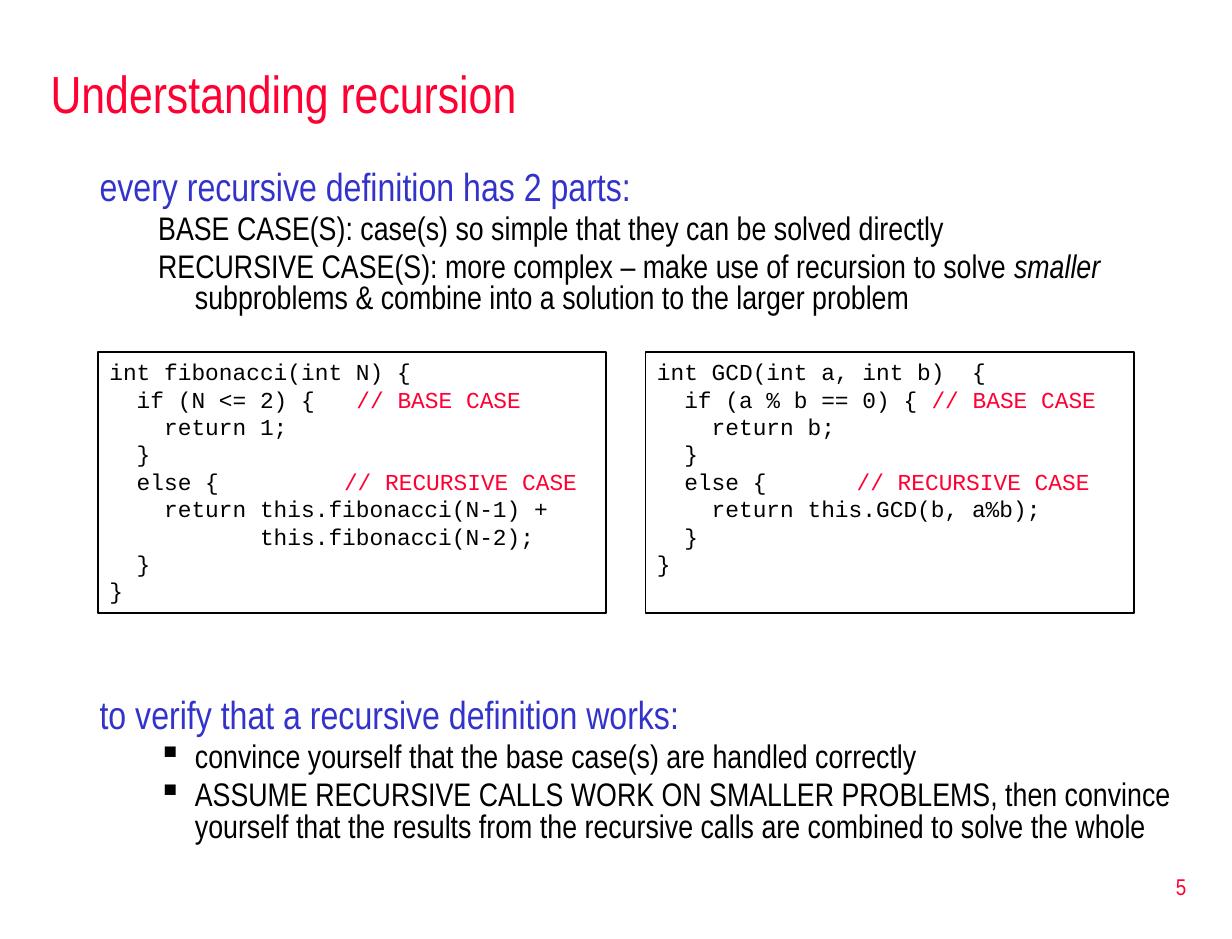
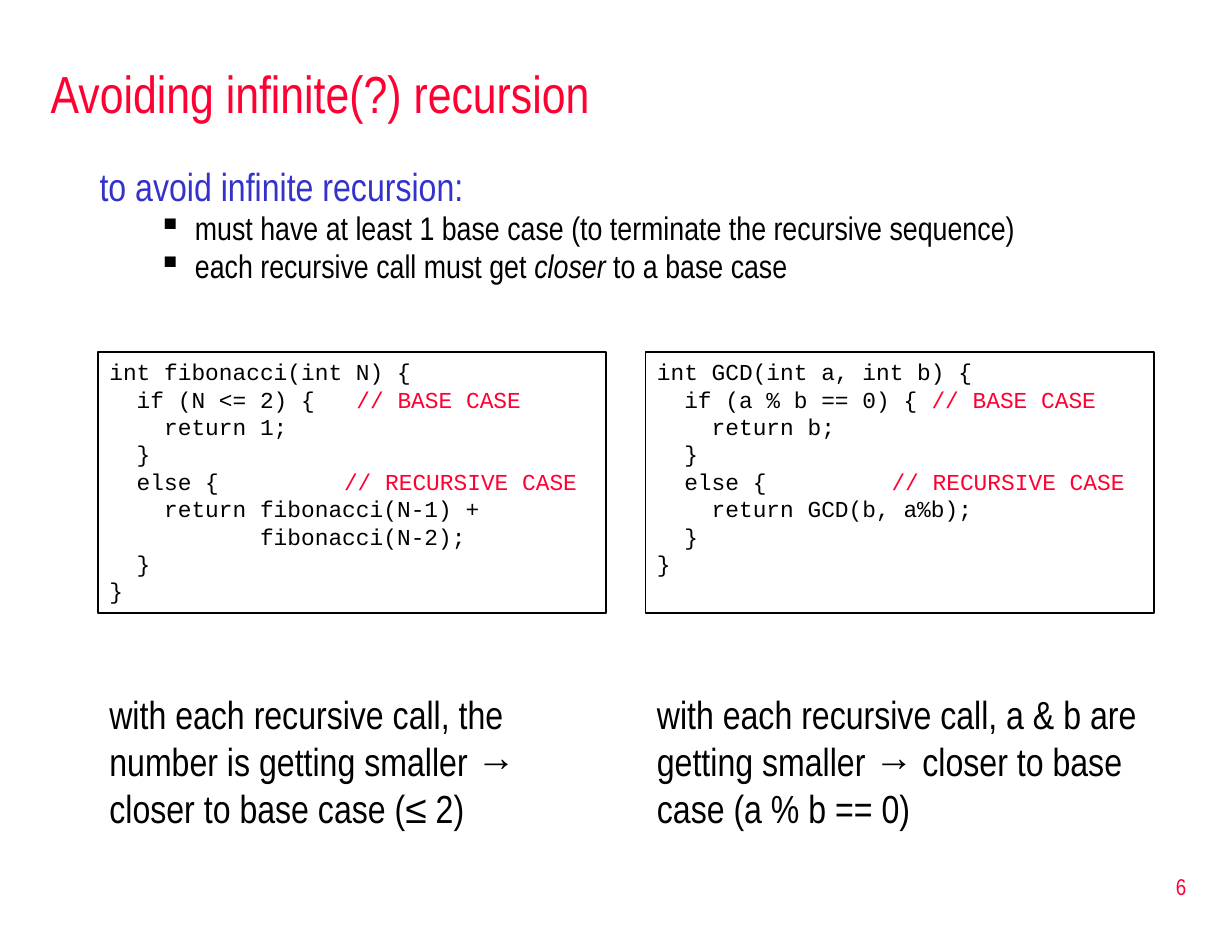
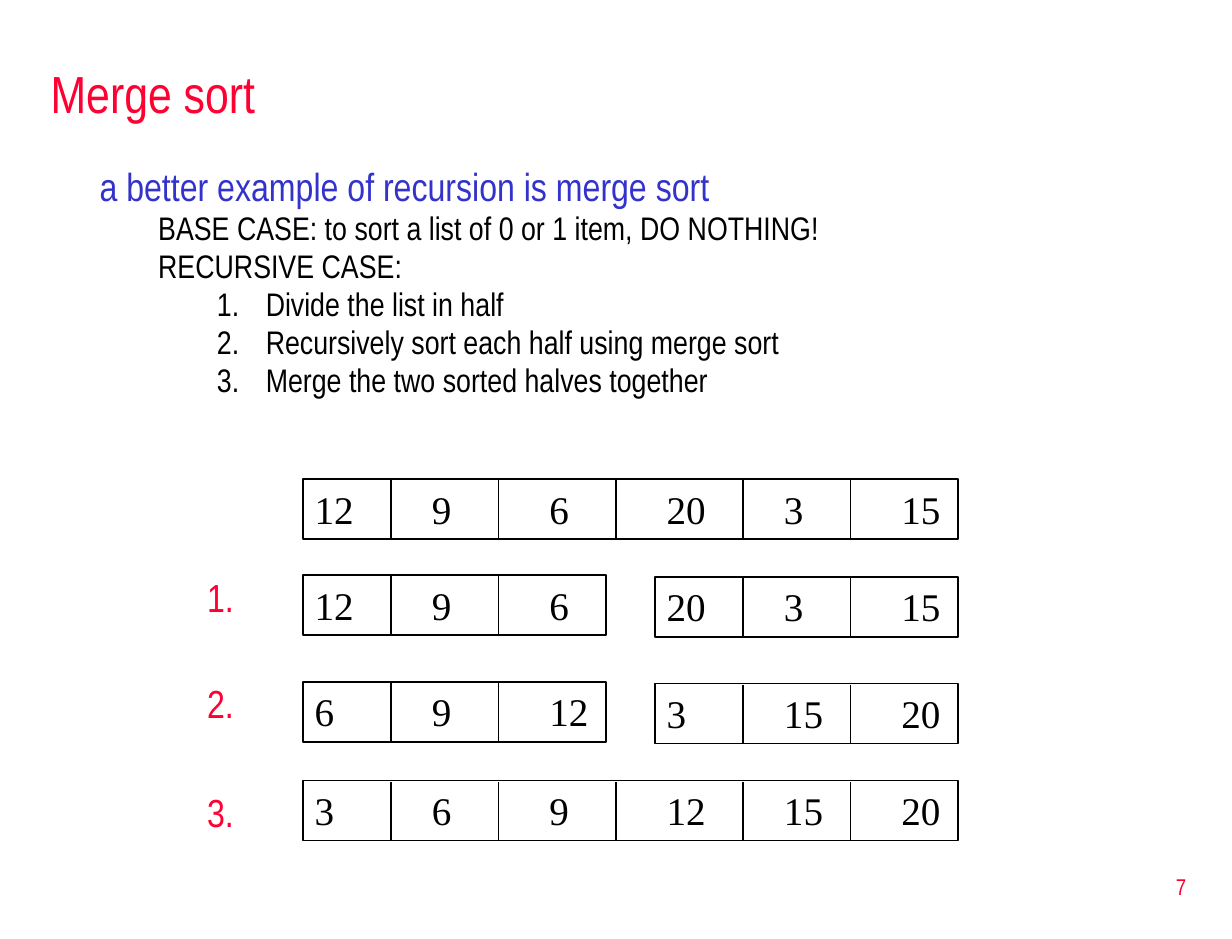
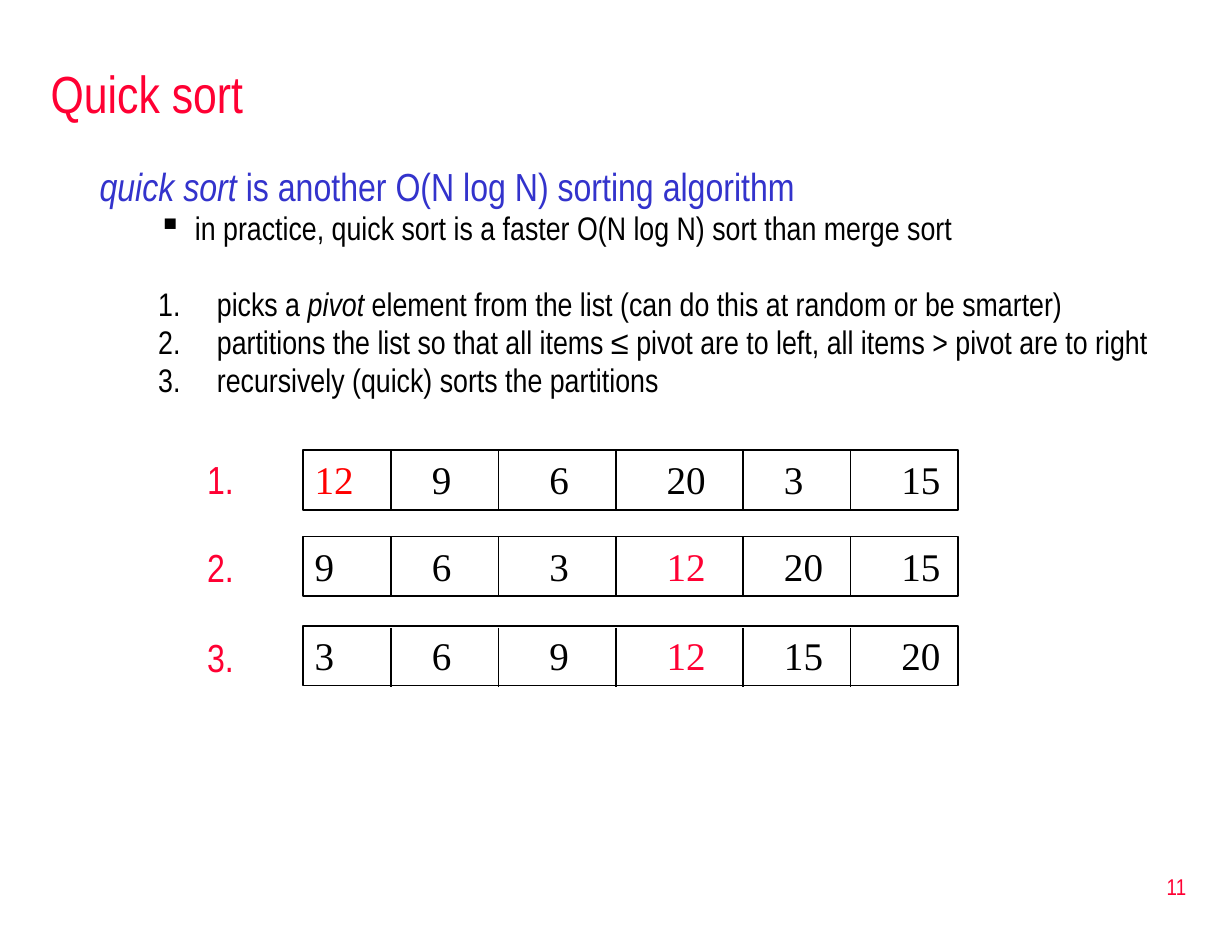
"""Builds four lecture slides on recursion, merge sort and quick sort."""
from lxml import etree
from pptx import Presentation
from pptx.dml.color import RGBColor
from pptx.enum import shapes, text
from pptx.oxml import ns
from pptx.util import Pt

COLORS = {"red": "FF0033", "pivot": "FF0000", "blue": "3333CC", "black": "000000"}
SANS, MONO, SERIF = "Arial Narrow", "Courier New", "Times New Roman"
KINDS = {
    "heading": (0, 27, -27, None),
    "plain": (1, 58.5, -22.5, None),
    "bullet": (1, 58.5, -22.5, "▪"),
    "number": (1, 72, -36, "1."),
    "step": (2, 102, -30, "1."),
}
DIVIDERS = (240, 306, 378, 456, 522)
LEFT, RIGHT, HALF, FULL = 186, 402, 186, 402

FIBONACCI = """int fibonacci(int N) {
  if (N <= 2) {   |// BASE CASE|
    return 1;
  }
  else {\t\t|// RECURSIVE CASE|
    return this.fibonacci(N-1) +
           this.fibonacci(N-2);
  }
}"""
GCD = """int GCD(int a, int b)  {
  if (a % b == 0) { |// BASE CASE|
    return b;
  }
  else {\t      |// RECURSIVE CASE|
    return this.GCD(b, a%b);
  }
}"""


def rgb(name):
    return RGBColor.from_string(COLORS[name])


class Deck:
    def __init__(self):
        self.prs = Presentation()
        self.prs.slide_width, self.prs.slide_height = Pt(756), Pt(576)
        self.s = None

    def slide(self, title, number):
        self.s = self.prs.slides.add_slide(self.prs.slide_layouts[6])
        middle = text.MSO_ANCHOR.MIDDLE
        self.text(24, 30, 714, 54, title, 32, "red", middle)
        tf = self.text(577.5, 525, 157.5, 38, number, 14, "red", middle)
        tf.paragraphs[0].alignment = text.PP_ALIGN.RIGHT

    def add_runs(self, p, content, font, size, color, accent=None):
        for i, part in enumerate(content.split("|")):
            if not part:
                continue
            r = p.add_run()
            r.text = part
            r.font.name, r.font.size = font, Pt(size)
            marked = i % 2 == 1
            r.font.color.rgb = rgb(accent if marked and accent else color)
            if marked and not accent:
                r.font.italic = True

    def frame(self, x, y, w, h):
        tf = self.s.shapes.add_textbox(Pt(x), Pt(y), Pt(w), Pt(h)).text_frame
        tf.word_wrap = True
        return tf

    def text(self, x, y, w, h, content, size=24, color="black", anchor=text.MSO_ANCHOR.TOP):
        tf = self.frame(x, y, w, h)
        tf.vertical_anchor = anchor
        self.add_runs(tf.paragraphs[0], content, SANS, size, color)
        return tf

    def body(self, y, h, *items):
        tf = self.frame(54, y, 685.5, h)
        previous = None
        for kind, content in items:
            level, margin, indent, mark = KINDS[kind]
            p = tf.add_paragraph() if previous else tf.paragraphs[0]
            p.level = level
            if kind == "heading":
                self.add_runs(p, content, SANS, 24, "blue")
            else:
                p.line_spacing = 0.8
                p.space_before = Pt(27.3 if (previous, kind) == ("bullet", "number") else 4)
                self.add_runs(p, content, SANS, 20, "black")
            pr = p._p.get_or_add_pPr()
            pr.set("marL", str(Pt(margin)))
            pr.set("indent", str(Pt(indent)))
            if mark == "1.":
                etree.SubElement(pr, ns.qn("a:buAutoNum"), type="arabicPeriod")
            elif mark:
                etree.SubElement(pr, ns.qn("a:buChar"), char=mark)
            previous = kind

    def box(self, x, y, w, h, lines, font, size, accent):
        sp = self.s.shapes.add_shape(shapes.MSO_SHAPE.RECTANGLE, Pt(x), Pt(y), Pt(w), Pt(h))
        sp.shadow.inherit = False
        sp.fill.background()
        sp.line.color.rgb, sp.line.width = rgb("black"), Pt(1)
        tf = sp.text_frame
        tf.word_wrap = True
        tf.vertical_anchor = text.MSO_ANCHOR.TOP
        for i, line in enumerate(lines):
            p = tf.add_paragraph() if i else tf.paragraphs[0]
            p.alignment = text.PP_ALIGN.LEFT
            self.add_runs(p, line, font, size, "black", accent)
            tabs = etree.SubElement(p._p.get_or_add_pPr(), ns.qn("a:tabLst"))
            for stop in range(72, 432, 72):
                etree.SubElement(tabs, ns.qn("a:tab"), pos=str(Pt(stop)), algn="l")

    def code(self, x, w, source):
        self.box(x, 216, w, 160, source.split("\n"), MONO, 14, "red")

    def array(self, y, values, x=LEFT, w=FULL, drop=0, accent="red"):
        self.box(x, y, w, 36.7, ["\t".join(values.split())], SERIF, 24, accent)
        for d in DIVIDERS:
            if x < d < x + w:
                self.line(d, y + drop, 36)

    def line(self, x, y, h):
        c = self.s.shapes.add_connector(
            shapes.MSO_CONNECTOR.STRAIGHT, Pt(x), Pt(y), Pt(x), Pt(y + h))
        c.line.color.rgb, c.line.width = rgb("black"), Pt(1)
        etree.SubElement(c._element.spPr, ns.qn("a:effectLst"))

    def labels(self, *tops):
        for i, y in enumerate(tops, 1):
            self.text(120, y, 48, 36, f"{i}.", color="red")


def main():
    deck = Deck()

    deck.slide("Understanding recursion", "5")
    deck.body(96, 114,
              ("heading", "every recursive definition has 2 parts:"),
              ("plain", "BASE CASE(S): case(s) so simple that they can be solved directly"),
              ("plain", "RECURSIVE CASE(S): more complex – make use of recursion to solve "
                        "|smaller| subproblems & combine into a solution to the larger problem"))
    deck.code(60, 312, FIBONACCI)
    deck.code(396, 300, GCD)
    deck.body(420, 114,
              ("heading", "to verify that a recursive definition works:"),
              ("bullet", "convince yourself that the base case(s) are handled correctly"),
              ("bullet", "ASSUME RECURSIVE CALLS WORK ON SMALLER PROBLEMS, then convince yourself "
                         "that the results from the recursive calls are combined to solve the whole"))

    deck.slide("Avoiding infinite(?) recursion", "6")
    deck.body(96, 102,
              ("heading", "to avoid infinite recursion:"),
              ("bullet", "must have at least 1 base case (to terminate the recursive sequence)"),
              ("bullet", "each recursive call must get |closer| to a base case"))
    deck.code(60, 312, FIBONACCI.replace("this.", ""))
    deck.code(396, 312, GCD.replace("this.", "").replace(")  {", ") {").replace("\t      ", "\t\t"))
    deck.text(60, 420, 312, 93.6, "with each recursive call, the number is getting smaller → "
                                  "closer to base case (≤ 2)")
    deck.text(396, 420, 312, 93.6, "with each recursive call, a & b are getting smaller → "
                                   "closer to base case (a % b == 0)")

    deck.slide("Merge sort", "7")
    deck.body(96, 180,
              ("heading", "a better example of recursion is merge sort"),
              ("plain", "BASE CASE: to sort a list of 0 or 1 item, DO NOTHING!"),
              ("plain", "RECURSIVE CASE:"),
              ("step", "Divide the list in half"),
              ("step", "Recursively sort each half using merge sort"),
              ("step", "Merge the two sorted halves together"))
    deck.array(294, "12 9 6 20 3 15")
    deck.array(352.8, "12 9 6", LEFT, HALF)
    deck.array(354, "20 3 15", RIGHT, HALF)
    deck.array(418.3, "6 9 12", LEFT, HALF)
    deck.array(419.3, "3 15 20", RIGHT, HALF, drop=0.7)
    deck.array(478.8, "3 6 9 12 15 20", drop=1.2)
    deck.labels(348, 413.3, 480)

    deck.slide("Quick sort", "11")
    deck.body(96, 174,
              ("heading", "|quick sort |is another O(N log N) sorting algorithm"),
              ("bullet", "in practice, quick sort is a faster O(N log N) sort than merge sort"),
              ("number", "picks a |pivot |element from the list (can do this at random or be smarter)"),
              ("number", "partitions the list so that all items ≤ pivot are to left, "
                         "all items > pivot are to right"),
              ("number", "recursively (quick) sorts the partitions"))
    deck.array(276, "|12| 9 6 20 3 15", accent="pivot")
    deck.array(329, "9 6 3 |12| 20 15")
    deck.array(383.8, "3 6 9 |12| 15 20", drop=1.4)
    deck.labels(276, 330, 385.2)

    deck.prs.save("out.pptx")


if __name__ == "__main__":
    main()
